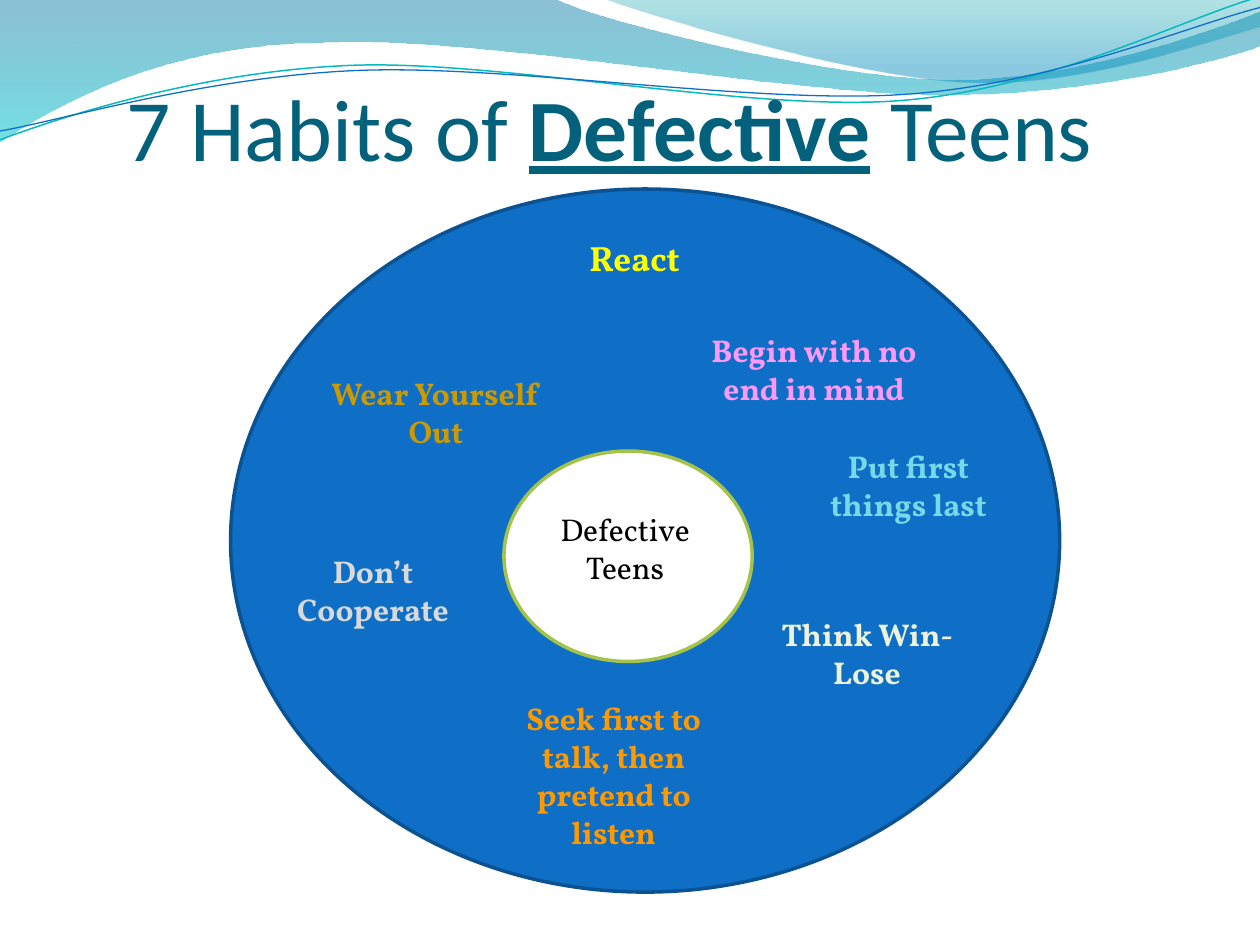
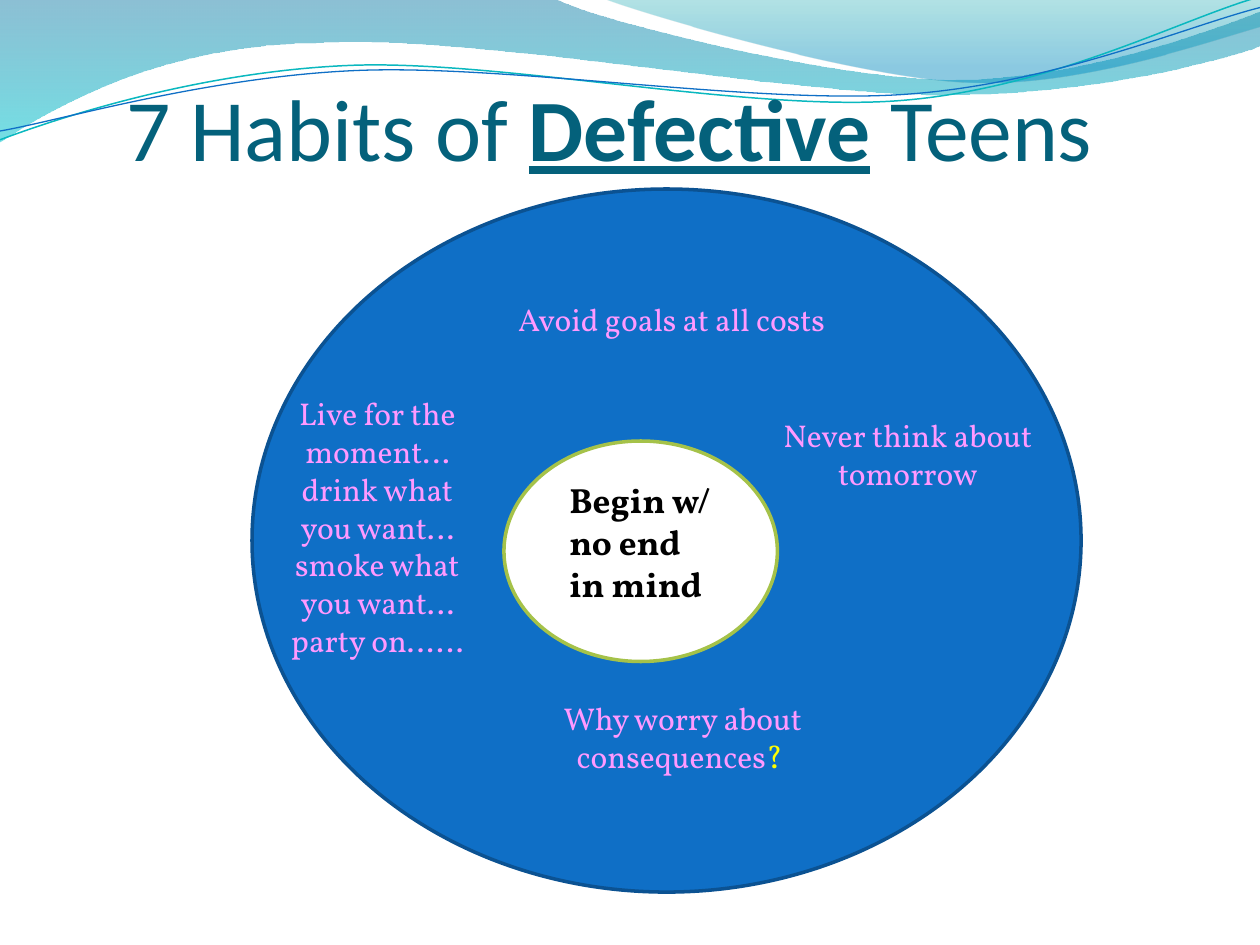
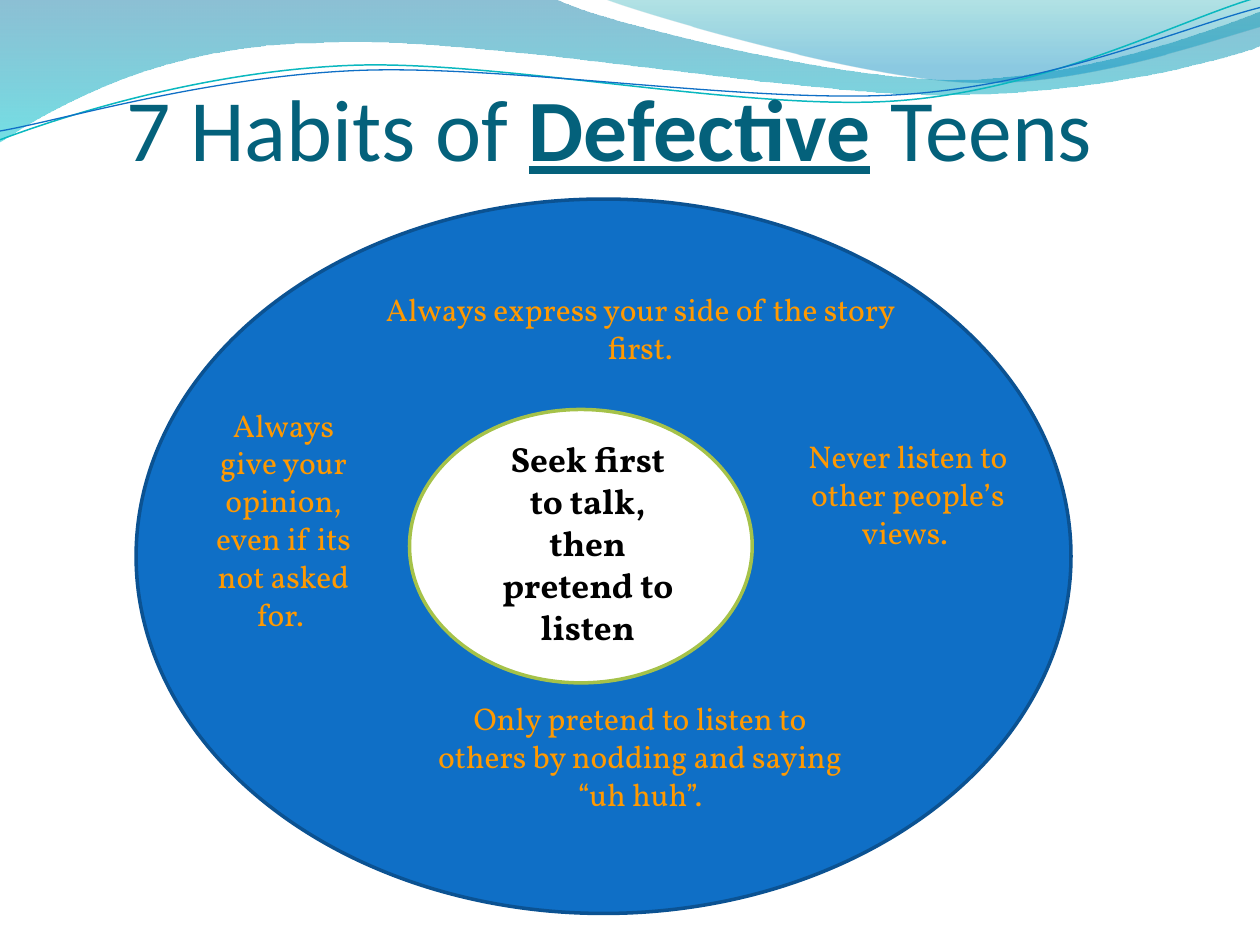
from lxml.etree import SubElement
from pptx import Presentation
from pptx.dml.color import RGBColor
from pptx.enum.shapes import MSO_SHAPE
from pptx.enum.text import MSO_ANCHOR, MSO_AUTO_SIZE, PP_ALIGN
from pptx.oxml.ns import qn
from pptx.util import Inches, Pt

TITLE_FONT, BODY_FONT = "Calibri", "Vollkorn"
TITLE_TEAL = RGBColor(0x04, 0x61, 0x7B)
DISC_BLUE = RGBColor(0x0F, 0x6F, 0xC6)
DISC_EDGE = RGBColor(0x0B, 0x52, 0x92)
HUB_EDGE = RGBColor(0xA5, 0xC2, 0x49)
WHITE = RGBColor(0xFF, 0xFF, 0xFF)
BLACK = RGBColor(0x00, 0x00, 0x00)
YELLOW = RGBColor(0xFF, 0xFF, 0x00)
PINK = RGBColor(0xFF, 0x99, 0xFF)
AQUA = RGBColor(0x77, 0xD9, 0xE8)
CREAM = RGBColor(0xED, 0xF3, 0xDB)
ORANGE = RGBColor(0xFF, 0x99, 0x00)
GREY = RGBColor(0xD9, 0xD9, 0xD9)
GOLD = RGBColor(0xCC, 0x99, 0x00)
WAVE_TEAL = RGBColor(0x0A, 0xB8, 0xBF)
WAVE_DEEP = RGBColor(0x00, 0x74, 0xA1)
WAVE_CYAN = RGBColor(0x00, 0xC6, 0xCF)
WAVE_GREEN = RGBColor(0x00, 0xA1, 0xA9)
WAVE_BLUE = RGBColor(0x00, 0x8B, 0xBF)

TITLE_BOX = (0.75, 0.17, 8.17, 1.25)
TITLE_RUNS = [("7 Habits of ", False), ("Defective", True), (" Teens", False)]

# A wave is a start point followed by straight (2 numbers) or Bézier (6 numbers) pieces.
# Gradient stops: position, colour, opacity in percent.
WAVE_BANDS = [
    ([(0, -0.01), (4.4, -0.01), (4.76, 0.17, 6.64, 0.63, 7.58, 0.63),
      (8.53, 0.63, 9.58, 0.26, 10, 0.09), (10.01, 0.36),
      (9.83, 0.44, 8.7, 0.76, 7.46, 0.75), (6.22, 0.75, 3.82, 0.28, 2.57, 0.34),
      (1.29, 0.35, 0.46, 0.83, -0.01, 1.13)],
     [(0, WAVE_DEEP, 45), (1, WAVE_CYAN, 55)]),
    ([(4.79, -0.01), (5.09, 0.11, 6.82, 0.62, 7.69, 0.65),
      (8.56, 0.69, 9.61, 0.32, 10, 0.21), (10, 0)],
     [(0, WAVE_GREEN, 30), (0.8, WAVE_BLUE, 45)]),
]
WAVE_LINES = [
    ([(0, 1.11), (0.48, 0.93, 1.58, 0.57, 2.77, 0.52),
      (3.95, 0.47, 5.93, 0.89, 7.13, 0.8), (8.33, 0.71, 9.38, 0.15, 9.98, -0.02)],
     WAVE_TEAL, 0.85),
    ([(0, 1.04), (0.47, 0.96, 1.64, 0.61, 2.83, 0.56),
      (4.03, 0.51, 5.97, 0.83, 7.17, 0.75), (8.36, 0.67, 9.41, 0.21, 10, 0.06)],
     DISC_BLUE, 0.75),
]

# Each label: box, runs of (text, colour), then any change to the label style.
SLIDES = [
    {"disc": (1.83, 1.5, 6.58, 5.58), "hub": (4, 3.58, 1.97, 1.67), "labels": [
        ((4.58, 1.83, 1.42, 0.44), [("React", YELLOW)],
         {"size": 20, "bold": True, "align": PP_ALIGN.LEFT}),
        ((5.5, 2.58, 1.92, 0.71), [("Begin with no end in mind", PINK)], {"bold": True}),
        ((6.25, 3.5, 1.92, 0.71), [("Put first things last", AQUA)], {"bold": True}),
        ((5.92, 4.83, 1.92, 0.71), [("Think Win-Lose", CREAM)], {"bold": True}),
        ((3.83, 5.5, 2.08, 1.31),
         [("Seek first to talk, then pretend to listen", ORANGE)], {"bold": True}),
        ((2, 4.33, 1.92, 0.71), [("Don’t Cooperate", GREY)], {"bold": True}),
        ((2.5, 2.92, 1.92, 0.71), [("Wear Yourself Out", GOLD)], {"bold": True}),
        ((4.25, 4, 1.42, 0.71), [("Defective Teens", BLACK)], {}),
    ]},
    {"disc": (2, 1.5, 6.58, 5.58), "hub": (4, 3.5, 2.17, 1.75), "labels": [
        ((4.42, 3.75, 1.33, 1.11), [("Begin w/ no end in mind", BLACK)],
         {"size": 20, "bold": True, "align": PP_ALIGN.LEFT}),
        ((3.08, 2.33, 4.5, 0.4), [("Avoid goals at all costs", PINK)], {}),
        ((3.67, 5.5, 3.5, 0.71),
         [("Why worry about consequences", PINK), ("? ", YELLOW)], {}),
        ((6.08, 3.25, 2.25, 0.71), [("Never think about tomorrow", PINK)], {}),
        ((2.08, 3.08, 1.83, 2.22),
         [("Live for the moment…drink what you want…smoke what you want…party on……",
           PINK)], {}),
    ]},
    {"disc": (1.08, 1.58, 7.42, 5.67), "hub": (3.25, 3.25, 2.72, 2.17), "labels": [
        ((3.83, 3.42, 1.67, 1.78),
         [("Seek first to talk, then pretend to listen", BLACK)],
         {"size": 20, "bold": True}),
        ((2.83, 2.25, 4.5, 0.71),
         [("Always express your side of the story first.", ORANGE)], {}),
        ((3.33, 5.5, 3.5, 1.01),
         [("Only pretend to listen to others by nodding and saying “uh huh”.",
           ORANGE)], {}),
        ((6.08, 3.42, 2.25, 1.01),
         [("Never listen to other people’s views. ", ORANGE)], {}),
        ((1.5, 3.17, 1.5, 1.92),
         [("Always give your opinion, even if its not asked for. ", ORANGE)], {}),
    ]},
]


def inches(values):
    return [Inches(value) for value in values]


def add_wave(slide, pieces, close):
    """Build a freeform through the end points, then bend its Bézier pieces."""
    start, *ends = [inches(piece[-2:]) for piece in pieces]
    builder = slide.shapes.build_freeform(*start)
    builder.add_line_segments(ends, close=close)
    shape = builder.convert_to_shape()
    shape.shadow.inherit = False
    segments = list(shape.element.iter(qn("a:lnTo")))
    for segment, piece in zip(segments, pieces[1:]):
        if len(piece) == 2:
            continue
        segment.tag = qn("a:cubicBezTo")
        for position, control in enumerate((piece[:2], piece[2:4])):
            x, y = inches(control)
            point = SubElement(segment, qn("a:pt"),
                               x=str(x - shape.left), y=str(y - shape.top))
            segment.insert(position, point)
    return shape


def move_waves_to_layout(slide, layout):
    """Draw the waves on the slide, then move them to the layout that all slides share."""
    waves = []
    for pieces, stops in WAVE_BANDS:
        band = add_wave(slide, pieces, close=True)
        band.line.fill.background()
        band.fill.gradient()
        band.fill.gradient_angle = 270
        for gradient_stop, (position, color, _) in zip(band.fill.gradient_stops, stops):
            gradient_stop.position = position
            gradient_stop.color.rgb = color
        for color_element, stop in zip(band.element.iter(qn("a:srgbClr")), stops):
            SubElement(color_element, qn("a:alpha"), val=str(stop[2] * 1000))
        waves.append(band)
    for pieces, color, width in WAVE_LINES:
        line = add_wave(slide, pieces, close=False)
        line.fill.background()
        line.line.color.rgb = color
        line.line.width = Pt(width)
        waves.append(line)
    for wave in waves:
        layout.shapes.element.append(wave.element)


def format_title(title):
    title.left, title.top, title.width, title.height = inches(TITLE_BOX)
    frame = title.text_frame
    frame.auto_size = MSO_AUTO_SIZE.NONE
    frame.vertical_anchor = MSO_ANCHOR.BOTTOM
    frame.margin_left = frame.margin_right = frame.margin_bottom = 0
    frame.margin_top = Inches(0.05)
    paragraph = frame.paragraphs[0]
    paragraph.alignment = PP_ALIGN.CENTER
    paragraph.font.name = TITLE_FONT
    paragraph.font.size = Pt(50)
    paragraph.font.color.rgb = TITLE_TEAL
    for text, stressed in TITLE_RUNS:
        run = paragraph.add_run()
        run.text = text
        run.font.bold = run.font.underline = stressed


def add_ellipse(slide, box, fill, edge):
    shape = slide.shapes.add_shape(MSO_SHAPE.OVAL, *inches(box))
    shape.shadow.inherit = False
    shape.fill.solid()
    shape.fill.fore_color.rgb = fill
    shape.line.color.rgb = edge
    shape.line.width = Pt(2)


def add_label(slide, box, runs, size=18, bold=False, align=PP_ALIGN.CENTER):
    frame = slide.shapes.add_textbox(*inches(box)).text_frame
    frame.word_wrap = True
    frame.auto_size = MSO_AUTO_SIZE.SHAPE_TO_FIT_TEXT
    paragraph = frame.paragraphs[0]
    paragraph.alignment = align
    paragraph.font.name = BODY_FONT
    paragraph.font.size = Pt(size)
    paragraph.font.bold = bold
    for text, color in runs:
        run = paragraph.add_run()
        run.text = text
        run.font.color.rgb = color


def main():
    presentation = Presentation()
    presentation.slide_width, presentation.slide_height = Inches(10), Inches(7.5)
    layout = presentation.slide_layouts.get_by_name("Title Only")
    for number, content in enumerate(SLIDES):
        slide = presentation.slides.add_slide(layout)
        if number == 0:
            move_waves_to_layout(slide, layout)
        format_title(slide.shapes.title)
        add_ellipse(slide, content["disc"], DISC_BLUE, DISC_EDGE)
        add_ellipse(slide, content["hub"], WHITE, HUB_EDGE)
        for box, runs, style in content["labels"]:
            add_label(slide, box, runs, **style)
    presentation.save("out.pptx")


if __name__ == "__main__":
    main()
